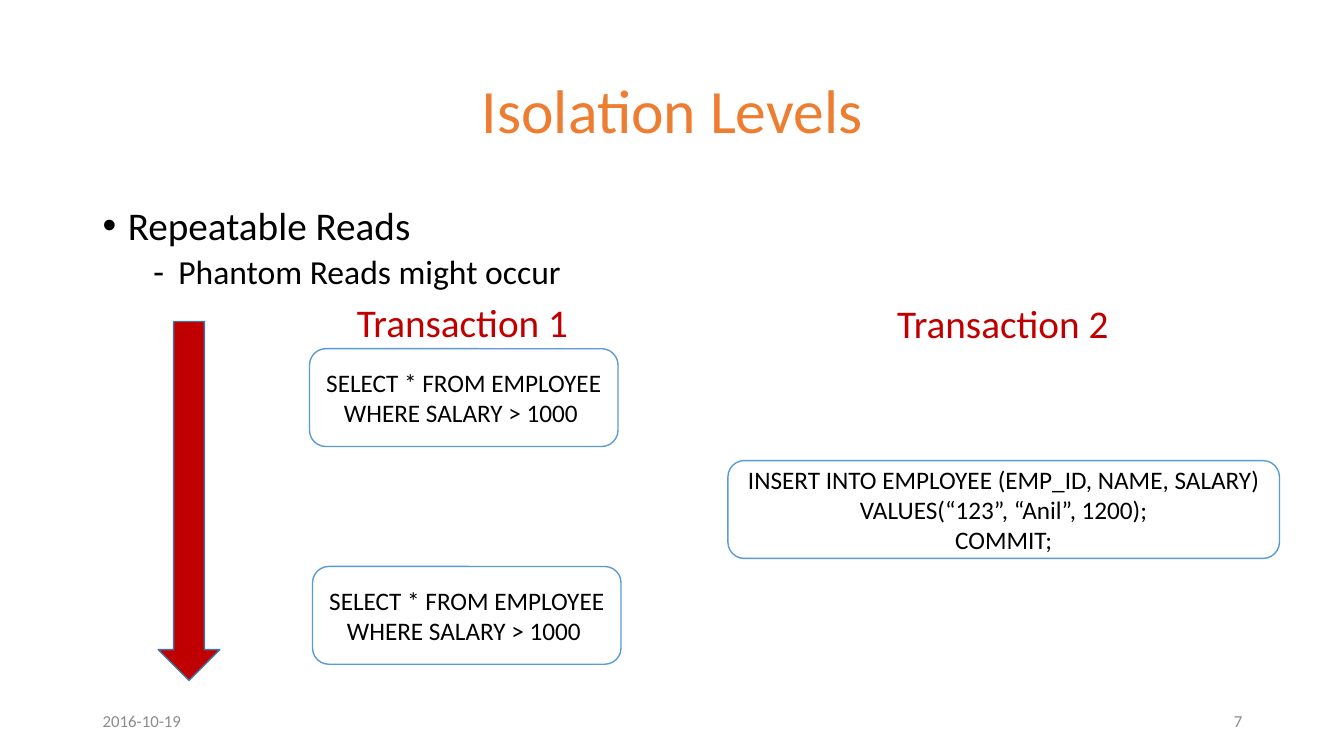
from dataclasses import dataclass

from lxml import etree
from pptx import Presentation
from pptx.dml.color import RGBColor
from pptx.enum.shapes import MSO_SHAPE
from pptx.enum.text import MSO_ANCHOR, PP_ALIGN
from pptx.oxml.ns import qn
from pptx.util import Inches, Pt

LEFT, CENTER, RIGHT = PP_ALIGN.LEFT, PP_ALIGN.CENTER, PP_ALIGN.RIGHT
TOP, MIDDLE = MSO_ANCHOR.TOP, MSO_ANCHOR.MIDDLE
ROUNDED, DOWN_ARROW = MSO_SHAPE.ROUNDED_RECTANGLE, MSO_SHAPE.DOWN_ARROW


@dataclass(frozen=True)
class Theme:
    """Colours, font and type sizes of the slide."""
    font: str = "Calibri"
    title: str = "ED7D31"
    text: str = "000000"
    accent: str = "C00000"
    muted: str = "8C8C8C"
    paper: str = "FFFFFF"
    box_line: str = "5B9BD5"
    arrow_line: str = "43739E"
    title_size: int = 44
    heading_size: int = 28
    sub_size: int = 24
    code_size: int = 18
    footer_size: int = 12


THEME = Theme()
MARGIN, CONTENT_W = 0.92, 11.5
QUERY = ["SELECT * FROM EMPLOYEE ", "WHERE SALARY > 1000 "]
INSERT = ["INSERT INTO EMPLOYEE (EMP_ID, NAME, SALARY)",
          "VALUES(“123”, “Anil”, 1200);", "COMMIT;"]


def add_paragraph(tf, text, size, color=THEME.text, align=LEFT, spacing=1.0,
                  before=0, bullet=None, indent=0):
    """Write one formatted paragraph, reusing the empty first one."""
    p = tf.paragraphs[0]
    if p.runs:
        p = tf.add_paragraph()
    p.alignment, p.line_spacing, p.space_before = align, spacing, Pt(before)
    r = p.add_run()
    r.text = text
    r.font.name, r.font.size = THEME.font, Pt(size)
    r.font.color.rgb = RGBColor.from_string(color)
    if bullet:
        pPr = p._p.get_or_add_pPr()
        pPr.set("marL", str(Inches(indent)))
        pPr.set("indent", str(Inches(-0.25)))
        etree.SubElement(pPr, qn("a:buFont")).set("typeface", "Arial")
        etree.SubElement(pPr, qn("a:buChar")).set("char", bullet)
    return p


def add_text_box(s, box, anchor=TOP, wrap=True):
    """Add a text box and return its text frame."""
    tf = s.shapes.add_textbox(*map(Inches, box)).text_frame
    tf.word_wrap, tf.vertical_anchor = wrap, anchor
    return tf


def add_filled_shape(s, kind, box, fill, line):
    """Add a flat preset shape with a thin outline."""
    sp = s.shapes.add_shape(kind, *map(Inches, box))
    sp.shadow.inherit = False
    sp.fill.solid()
    sp.fill.fore_color.rgb = RGBColor.from_string(fill)
    sp.line.color.rgb = RGBColor.from_string(line)
    sp.line.width = Pt(1)
    return sp


def add_title(s, box, text):
    """Place the slide title."""
    add_paragraph(add_text_box(s, box, MIDDLE), text, THEME.title_size,
                  THEME.title, CENTER, spacing=0.9)


def add_bullets(s, box, heading, detail):
    """Place the main point and its sub-point."""
    tf = add_text_box(s, box)
    add_paragraph(tf, heading, THEME.heading_size, spacing=0.9, before=10,
                  bullet="•", indent=0.25)
    p = add_paragraph(tf, detail, THEME.sub_size, spacing=0.9, before=5,
                      bullet="-", indent=0.75)
    p.level = 1


def add_statement(s, box, lines):
    """Place one SQL statement in a rounded box."""
    sp = add_filled_shape(s, ROUNDED, box, THEME.paper, THEME.box_line)
    tf = sp.text_frame
    tf.word_wrap, tf.vertical_anchor = True, MIDDLE
    for line in lines:
        add_paragraph(tf, line, THEME.code_size, align=CENTER)


def add_timeline(s, box):
    """Place the time arrow, transaction labels and statements."""
    x, y, w, h = box
    add_filled_shape(s, DOWN_ARROW, (x, y + 0.28, 0.61, h - 0.28),
                     THEME.accent, THEME.arrow_line)
    for label, dx, dy in (("Transaction 1", 1.87, 0), ("Transaction 2", 7.23, 0.01)):
        tf = add_text_box(s, (x + dx, y + dy, 2.32, 0.57), wrap=False)
        add_paragraph(tf, label, THEME.heading_size, THEME.accent)
    for lines, dx, dy, width in ((QUERY, 1.5, 0.55, 3.06), (QUERY, 1.53, 2.71, 3.06),
                                 (INSERT, w - 5.47, 1.66, 5.47)):
        add_statement(s, (x + dx, y + dy, width, 0.97), lines)


def add_footer(s, box, date, number):
    """Place the date at the left and the slide number at the right."""
    x, y, w, h = box
    for text, left, align in ((date, x, LEFT), (number, x + w - 3, RIGHT)):
        add_paragraph(add_text_box(s, (left, y, 3, h), MIDDLE), text,
                      THEME.footer_size, THEME.muted, align)


def main():
    """Build and save the slide."""
    prs = Presentation()
    prs.slide_width, prs.slide_height = Inches(13.33), Inches(7.5)
    s = prs.slides.add_slide(prs.slide_layouts[6])
    add_title(s, (MARGIN, 0.4, CONTENT_W, 1.45), "Isolation Levels")
    add_bullets(s, (MARGIN, 2, CONTENT_W, 4.76), "Repeatable Reads",
                "Phantom Reads might occur")
    add_timeline(s, (1.57, 2.91, 11.12, 3.84))
    add_footer(s, (MARGIN, 6.95, CONTENT_W, 0.4), "2016-10-19", "7")
    prs.save("out.pptx")


if __name__ == "__main__":
    main()
